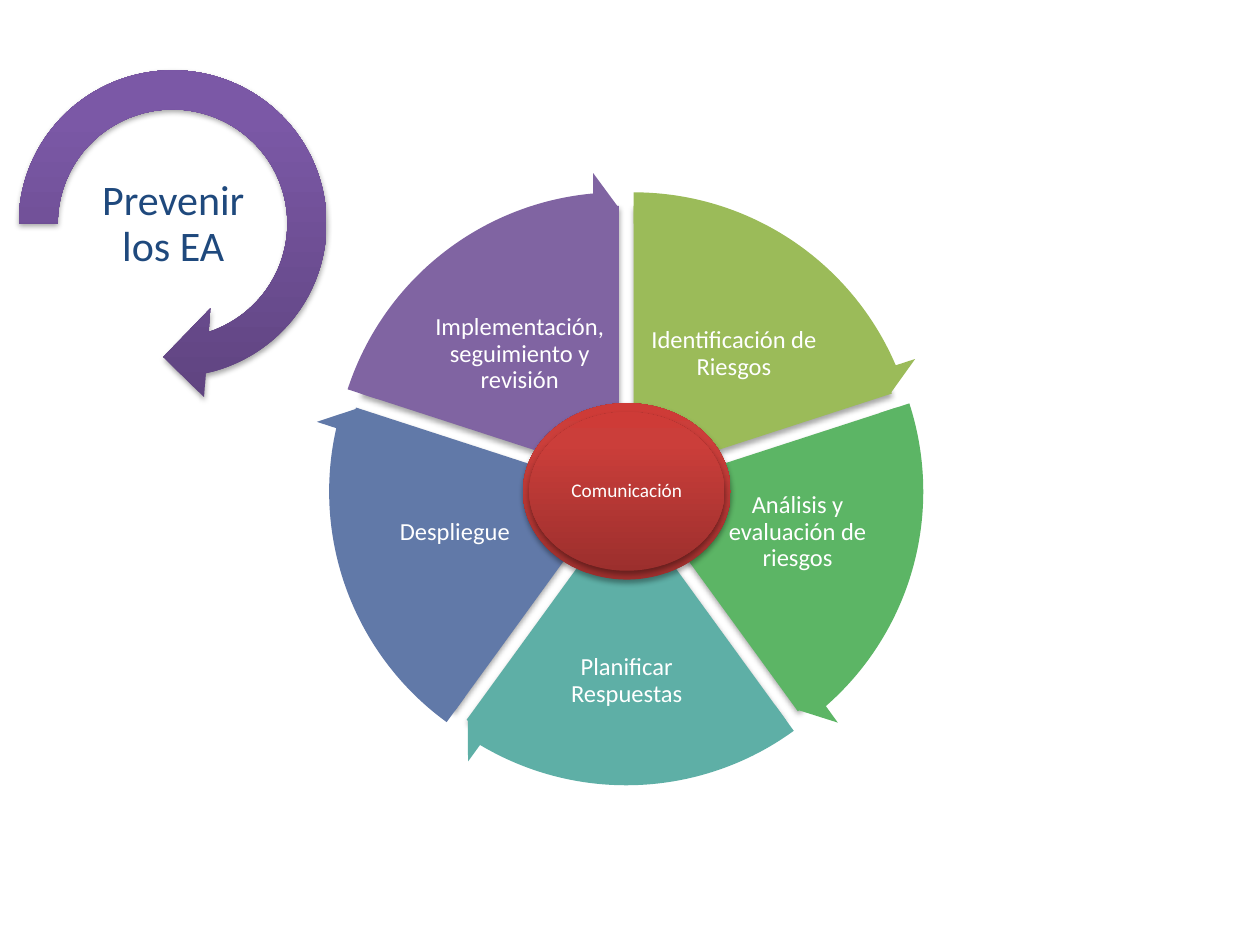
from dataclasses import dataclass
from math import cos, radians, sin

from lxml import etree
from pptx import Presentation
from pptx.dml.color import RGBColor
from pptx.enum.shapes import MSO_SHAPE
from pptx.enum.text import MSO_ANCHOR, PP_ALIGN
from pptx.oxml.ns import qn
from pptx.util import Inches, Pt

PIE, ARROW, OVAL = MSO_SHAPE.PIE, MSO_SHAPE.CIRCULAR_ARROW, MSO_SHAPE.OVAL
CENTER, MIDDLE = PP_ALIGN.CENTER, MSO_ANCHOR.MIDDLE


@dataclass(frozen=True)
class Theme:
    font: str = "Calibri"
    light: str = "FFFFFF"
    title: str = "1F497D"
    purple: tuple = ((0, "5F4480"), (80, "7B58A6"), (100, "7C57A8"))
    red: tuple = ((0, "9C2F2D"), (80, "CB3E3A"), (100, "CE3B37"))
    title_size: int = 24
    step_size: int = 14
    hub_size: int = 11


T = Theme()

# Content: step, colour, label box (left, top, width, height)
STEPS = [
    ("Identificación de Riesgos", "9BBB59", (5.13, 2.35, 1.39, 0.92)),
    ("Análisis y evaluación de riesgos", "5CB565", (5.69, 3.71, 1.28, 1.03)),
    ("Planificar Respuestas", "5EAFA6", (4.36, 4.84, 1.23, 1.13)),
    ("Despliegue", "6179A8", (2.97, 3.71, 1.28, 1.03)),
    ("Implementación, seguimiento y revisión", "8064A2", (3.43, 2.35, 1.39, 0.92)),
]
GOAL = "Prevenir los EA"
HUB = "Comunicación"

# Wheel geometry, in inches and degrees
WHEEL_X, WHEEL_Y = 4.97, 3.87
PIE_SIZE, ARROW_SIZE = 4.31, 4.85
GAP = 0.1
SWEEP = 360 / len(STEPS)
HEAD = 5.46
DEG = 0.6  # one degree as an adjustment value


def add_shadow(sp):
    effects = sp.element.spPr.find(qn("a:effectLst"))
    shadow = etree.SubElement(effects, qn("a:outerShdw"), blurRad="40000",
                              dist="23000", dir="5400000", rotWithShape="0")
    color = etree.SubElement(shadow, qn("a:srgbClr"), val="000000")
    etree.SubElement(color, qn("a:alpha"), val="35000")


def add_gradient(sp, stops):
    grad = etree.Element(qn("a:gradFill"), rotWithShape="1")
    stop_list = etree.SubElement(grad, qn("a:gsLst"))
    for pos, color in stops:
        gs = etree.SubElement(stop_list, qn("a:gs"), pos=str(pos * 1000))
        etree.SubElement(gs, qn("a:srgbClr"), val=color)
    etree.SubElement(grad, qn("a:lin"), ang="16200000", scaled="0")
    sp.element.spPr.find(qn("a:prstGeom")).addnext(grad)


def add_shape(group, kind, box, fill, adj=(), shadow=True):
    sp = group.shapes.add_shape(kind, *map(Inches, box))
    for i, value in enumerate(adj):
        sp.adjustments[i] = value
    sp.line.fill.background()
    sp.shadow.inherit = False
    if isinstance(fill, str):
        sp.fill.solid()
        sp.fill.fore_color.rgb = RGBColor.from_string(fill)
    else:
        add_gradient(sp, fill)
    if shadow:
        add_shadow(sp)
    return sp


def write(sp, text, size, color=T.light, inset=0.02):
    tf = sp.text_frame
    tf.word_wrap = True
    tf.vertical_anchor = MIDDLE
    tf.margin_left = tf.margin_right = Inches(inset)
    tf.margin_top = tf.margin_bottom = Inches(inset)
    p = tf.paragraphs[0]
    p.alignment = CENTER
    p.line_spacing = 0.9
    r = p.add_run()
    r.text = text
    r.font.name = T.font
    r.font.size = Pt(size)
    r.font.color.rgb = RGBColor.from_string(color)


def add_label(group, box, text, size, **fmt):
    write(group.shapes.add_textbox(*map(Inches, box)), text, size, **fmt)


def sector(i, size):
    """Box and start and end angles of a sector pushed out from the centre."""
    start = (270 + SWEEP * i) % 360
    mid = radians(start + SWEEP / 2)
    left = WHEEL_X + GAP * cos(mid) - size / 2
    top = WHEEL_Y + GAP * sin(mid) - size / 2
    return (left, top, size, size), start, (start + SWEEP) % 360


prs = Presentation()
prs.slide_width, prs.slide_height = Inches(10), Inches(7.5)
slide = prs.slides.add_slide(prs.slide_layouts[6])

# Wheel: sectors with labels, then the arrows along the rim
wheel = slide.shapes.add_group_shape()
for i, (text, color, label_box) in enumerate(STEPS):
    box, start, end = sector(i, PIE_SIZE)
    add_shape(wheel, PIE, box, color, (start * DEG, end * DEG))
    add_label(wheel, label_box, text, T.step_size)
for i, (_, color, _) in enumerate(STEPS):
    box, start, end = sector(i, ARROW_SIZE)
    adj = (0.051, HEAD * DEG, (end - HEAD) * DEG, start * DEG, 0.059)
    add_shape(wheel, ARROW, box, color, adj, shadow=False)

# Goal: large circular arrow
goal = slide.shapes.add_group_shape()
add_shape(goal, ARROW, (-0.05, 0.36, 2.84, 2.83), T.purple,
          (0.11, 11.42, 75 * DEG, 180 * DEG, 0.125))
add_label(goal, (0.58, 1.39, 1.59, 0.79), GOAL, T.title_size, color=T.title)

# Hub: two nested ovals
hub = slide.shapes.add_group_shape()
add_shape(hub, OVAL, (4.15, 3.2, 1.65, 1.4), T.red)
core = add_shape(hub, OVAL, (4.2, 3.27, 1.55, 1.26), T.red)
write(core, HUB, T.hub_size, inset=0.06)

prs.save("out.pptx")
